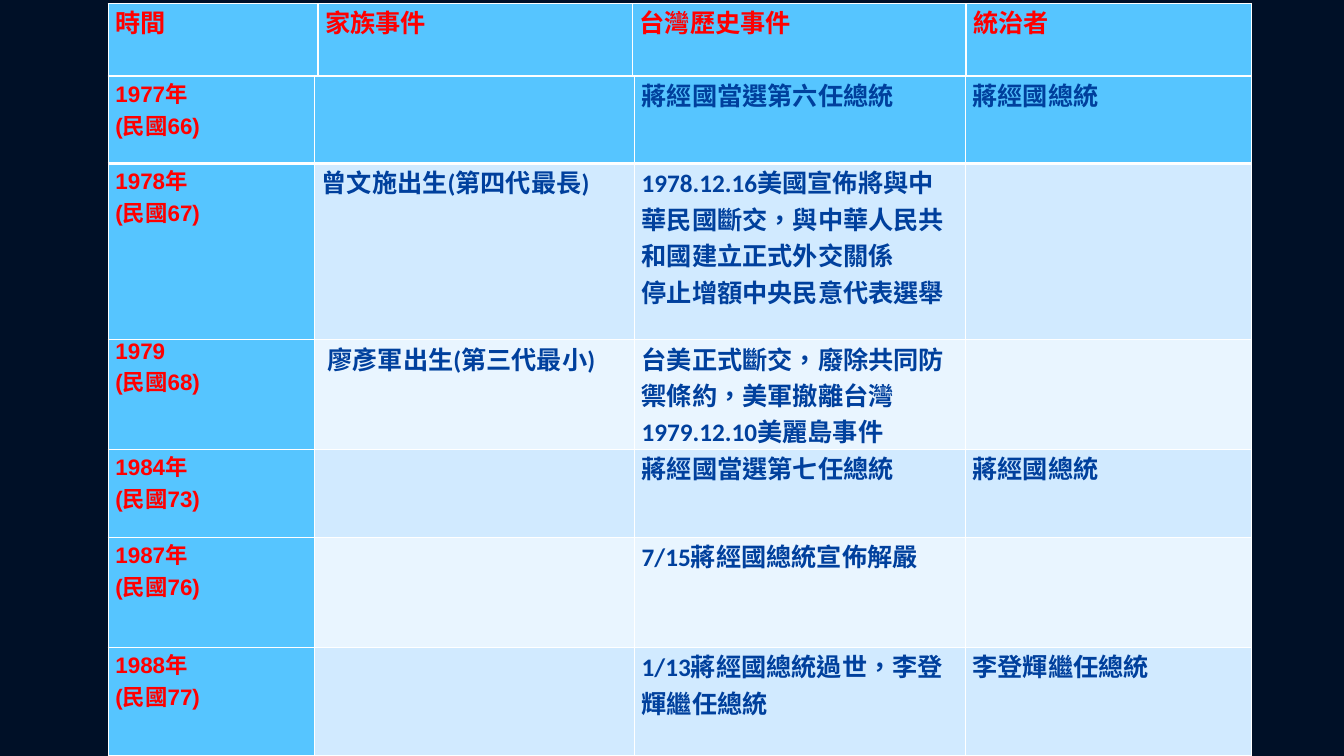
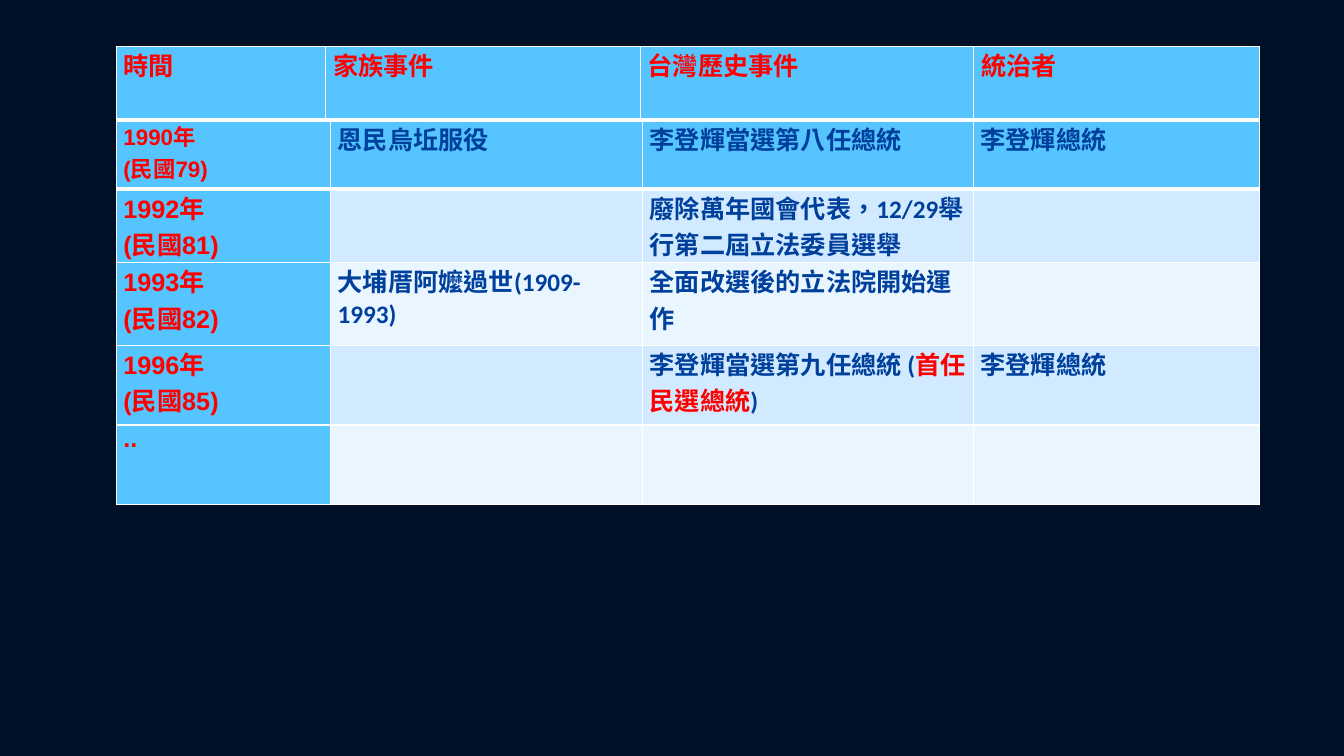
from lxml.etree import SubElement
from pptx import Presentation
from pptx.dml.color import RGBColor
from pptx.enum.lang import MSO_LANGUAGE_ID
from pptx.oxml import parse_xml
from pptx.oxml.ns import nsdecls, qn
from pptx.util import Pt

NIGHT, SKY, PALE, MIST = "001027", "56C5FF", "D1EAFF", "E9F5FF"
RED, NAVY, WHITE = "FF0000", "00409D", "FFFFFF"
TABLE_WIDTH = 816.5
HEADINGS = ["時間", "家族事件", "台灣歷史事件", "統治者"]
HEADING_COLUMNS = [149.8, 224.7, 238.2, 203.8]
HEADING_HEIGHT = 52.4

# Each event: row height, year size, year, family, history, ruler; *text* is red.
EVENTS_1977_1988 = [
    (62, 16, ("1977年", "(民國66)"), (), ("蔣經國當選第六任總統",), ("蔣經國總統",)),
    (126, 16, ("1978年", "(民國67)"), ("曾文施出生(第四代最長)",),
     ("1978.12.16美國宣佈將與中華民國斷交，與中華人民共和國建立正式外交關係",
      "停止增額中央民意代表選舉"), ()),
    (78.5, 16, ("1979", "(民國68)"), (" 廖彥軍出生(第三代最小)",),
     ("台美正式斷交，廢除共同防禦條約，美軍撤離台灣", "1979.12.10美麗島事件"), ()),
    (62.5, 16, ("1984年", "(民國73)"), (), ("蔣經國當選第七任總統",), ("蔣經國總統",)),
    (79, 16, ("1987年", "(民國76)"), (), ("7/15蔣經國總統宣佈解嚴",), ()),
    (77, 16, ("1988年", "(民國77)"), (), ("1/13蔣經國總統過世，李登輝繼任總統",),
     ("李登輝繼任總統",)),
]
EVENTS_1990_1996 = [
    (49.5, 16, ("1990年", "(民國79)"), ("恩民烏坵服役",), ("李登輝當選第八任總統",),
     ("李登輝總統",)),
    (52.5, 18, ("1992年", "(民國81)"), (),
     ("廢除萬年國會代表，12/29舉行第二屆立法委員選舉",), ()),
    (59, 18, ("1993年", "(民國82)"), ("大埔厝阿嬤過世(1909-1993)",),
     ("全面改選後的立法院開始運作",), ()),
    (57, 18, ("1996年", "(民國85)"), (), ("李登輝當選第九任總統 (*首任民選總統*)",),
     ("李登輝總統",)),
    (57, 18, ("..",), (), (), ()),
]


def color(hex_code):
    """Turn a hex string into a colour."""
    return RGBColor.from_string(hex_code)


def set_borders(cell, top, bottom):
    """Draw white borders, with the given top and bottom widths."""
    properties = cell._tc.get_or_add_tcPr()
    widths = {"lnL": 1, "lnR": 1, "lnT": top, "lnB": bottom}
    for position, (side, width) in enumerate(widths.items()):
        border = parse_xml(f'<a:{side} {nsdecls("a")} w="{Pt(width)}"/>')
        fill = SubElement(border, qn("a:solidFill"))
        SubElement(fill, qn("a:srgbClr"), val=WHITE)
        properties.insert(position, border)


def write_cell(cell, lines, size, font_name, ink):
    """Write bold lines into a cell, with starred parts in red."""
    cell.margin_left = cell.margin_right = Pt(5.2)
    cell.margin_top = cell.margin_bottom = 0
    for number, line in enumerate(lines):
        frame = cell.text_frame
        paragraph = frame.add_paragraph() if number else frame.paragraphs[0]
        for part, text in enumerate(line.split("*")):
            run = paragraph.add_run()
            run.text = text
            font = run.font
            font.name, font.size, font.bold = font_name, Pt(size), True
            font.color.rgb = color(RED if part % 2 else ink)
            font.language_id = MSO_LANGUAGE_ID.TRADITIONAL_CHINESE


def add_grid(slide, left, top, columns, heights):
    """Add a plain table with the given column widths and row heights."""
    grid = slide.shapes.add_table(len(heights), len(columns), Pt(left), Pt(top),
                                  Pt(TABLE_WIDTH), Pt(sum(heights))).table
    grid.first_row = grid.horz_banding = False
    for column, width in zip(grid.columns, columns):
        column.width = Pt(width)
    for row, height in zip(grid.rows, heights):
        row.height = Pt(height)
    return grid


def paint_cell(cell, background, top=1, bottom=1):
    """Fill a cell and draw its borders."""
    cell.fill.solid()
    cell.fill.fore_color.rgb = color(background)
    set_borders(cell, top, bottom)


def add_headings(slide, left, top):
    """Add the heading row of the timeline."""
    grid = add_grid(slide, left, top, HEADING_COLUMNS, [HEADING_HEIGHT])
    for cell, heading in zip(grid.rows[0].cells, HEADINGS):
        paint_cell(cell, SKY, bottom=3)
        write_cell(cell, [heading], 18, "Calibri", RED)


def add_events(slide, left, top, columns, events):
    """Add the timeline rows, the first one in the heading colour."""
    grid = add_grid(slide, left, top, columns, [event[0] for event in events])
    for index, (_, year_size, *entries) in enumerate(events):
        band = SKY if index == 0 else (MIST, PALE)[index % 2]
        for column, lines in enumerate(entries):
            cell = grid.cell(index, column)
            paint_cell(cell, band if column else SKY,
                       top=3 if index == 1 else 1, bottom=3 if index == 0 else 1)
            if column:
                write_cell(cell, lines, 18, "Calibri", NAVY)
            else:
                write_cell(cell, lines, year_size, "Arial", RED)


def main():
    """Build the two timeline slides."""
    deck = Presentation()
    deck.slide_width, deck.slide_height = Pt(960), Pt(540)
    backdrop = deck.slide_master.background.fill
    backdrop.solid()
    backdrop.fore_color.rgb = color(NIGHT)
    blank = deck.slide_layouts[6]

    earlier = deck.slides.add_slide(blank)
    add_headings(earlier, 77.3, 2.6)
    add_events(earlier, 77.3, 54.7, [147.3, 228.6, 236.3, 204.3], EVENTS_1977_1988)

    later = deck.slides.add_slide(blank)
    add_events(later, 83, 85.6, [153, 222.9, 236.3, 204.3], EVENTS_1990_1996)
    add_headings(later, 83, 33.2)

    deck.save("out.pptx")


if __name__ == "__main__":
    main()
